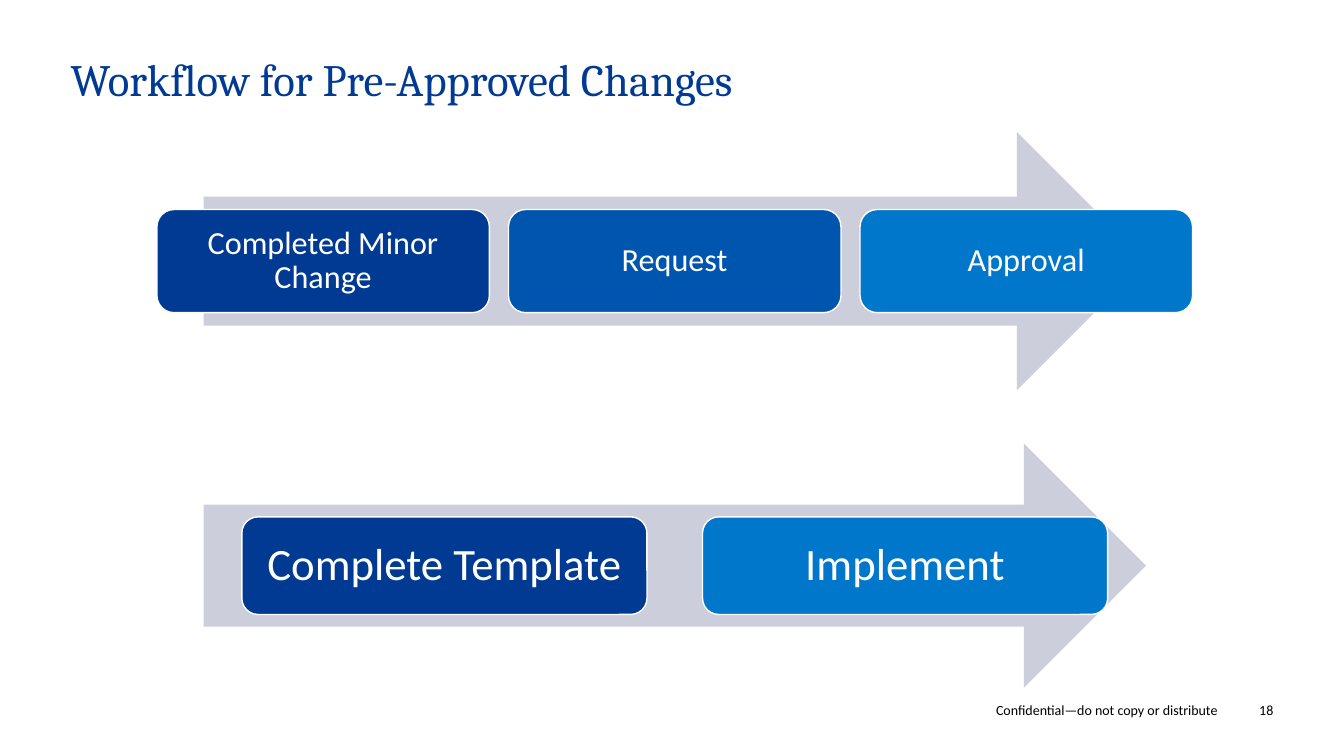
"""Build the slide on the workflow for pre-approved changes."""
import pptx
import pptx.dml.color
import pptx.enum.shapes
import pptx.enum.text
import pptx.util

Cm = pptx.util.Cm
Pt = pptx.util.Pt
SHAPES = pptx.enum.shapes.MSO_SHAPE
ALIGN = pptx.enum.text.PP_ALIGN
ANCHOR = pptx.enum.text.MSO_ANCHOR

TITLE = "Workflow for Pre-Approved Changes"
WORKFLOWS = [
    {
        "top": 3.33, "height": 6.5, "step_width": 8.38, "gap": 0.48,
        "size": 23, "inset": 0.25,
        "steps": [("Completed Minor Change", "003A93"),
                  ("Request", "0056AE"),
                  ("Approval", "0077CA")],
    },
    {
        "top": 11.18, "height": 6.15, "step_width": 10.21, "gap": 1.4,
        "size": 32, "inset": 0.33,
        "steps": [("Complete Template", "003A93"),
                  ("Implement", "0077CA")],
    },
]
FOOTERS = [
    ("Confidential—do not copy or distribute", 9.27, 21.41),
    ("18", 31.12, 0.97),
]
ARROW_LEFT, ARROW_WIDTH = 5.13, 23.75
STEP_SHARE = 0.4
FOOTER_TOP, FOOTER_HEIGHT = 17.68, 0.43


def color(value):
    return pptx.dml.color.RGBColor.from_string(value)


def write(shape, text, font, size, ink, align, anchor, inset=0):
    frame = shape.text_frame
    frame.word_wrap = True
    frame.vertical_anchor = anchor
    frame.margin_left = frame.margin_right = Cm(inset)
    frame.margin_top = frame.margin_bottom = Cm(inset)
    para = frame.paragraphs[0]
    para.text = text
    para.alignment = align
    para.font.name = font
    para.font.size = Pt(size)
    para.font.color.rgb = color(ink)
    return para


def add_block(page, preset, left, top, width, height, fill):
    block = page.shapes.add_shape(preset, Cm(left), Cm(top), Cm(width), Cm(height))
    block.shadow.inherit = False
    block.fill.solid()
    block.fill.fore_color.rgb = color(fill)
    block.line.fill.background()
    return block


def add_workflow(page, flow):
    add_block(page, SHAPES.RIGHT_ARROW, ARROW_LEFT, flow["top"],
              ARROW_WIDTH, flow["height"], "CCCEDC")
    width, pitch = flow["step_width"], flow["step_width"] + flow["gap"]
    height = flow["height"] * STEP_SHARE
    row_width = len(flow["steps"]) * pitch - flow["gap"]
    left = ARROW_LEFT + (ARROW_WIDTH - row_width) / 2
    top = flow["top"] + (flow["height"] - height) / 2
    for index, (text, fill) in enumerate(flow["steps"]):
        step = add_block(page, SHAPES.ROUNDED_RECTANGLE, left + index * pitch,
                         top, width, height, fill)
        step.line.color.rgb = color("FFFFFF")
        step.line.width = Pt(1)
        para = write(step, text, "Calibri", flow["size"], "FFFFFF",
                     ALIGN.CENTER, ANCHOR.MIDDLE, flow["inset"])
        para.line_spacing = 0.9


def main():
    deck = pptx.Presentation()
    deck.slide_width, deck.slide_height = Cm(33.87), Cm(19.05)
    page = deck.slides.add_slide(deck.slide_layouts[5])

    title = page.shapes.title
    title.left, title.top = Cm(1.78), Cm(1.45)
    title.width, title.height = Cm(30.28), Cm(2.67)
    para = write(title, TITLE, "Cambria", 32, "003A93", ALIGN.LEFT, ANCHOR.TOP)
    para.line_spacing = 0.9

    for flow in WORKFLOWS:
        add_workflow(page, flow)

    for text, left, width in FOOTERS:
        box = page.shapes.add_textbox(Cm(left), Cm(FOOTER_TOP),
                                      Cm(width), Cm(FOOTER_HEIGHT))
        write(box, text, "Calibri", 10, "000000", ALIGN.RIGHT, ANCHOR.BOTTOM)

    deck.save("out.pptx")


if __name__ == "__main__":
    main()
